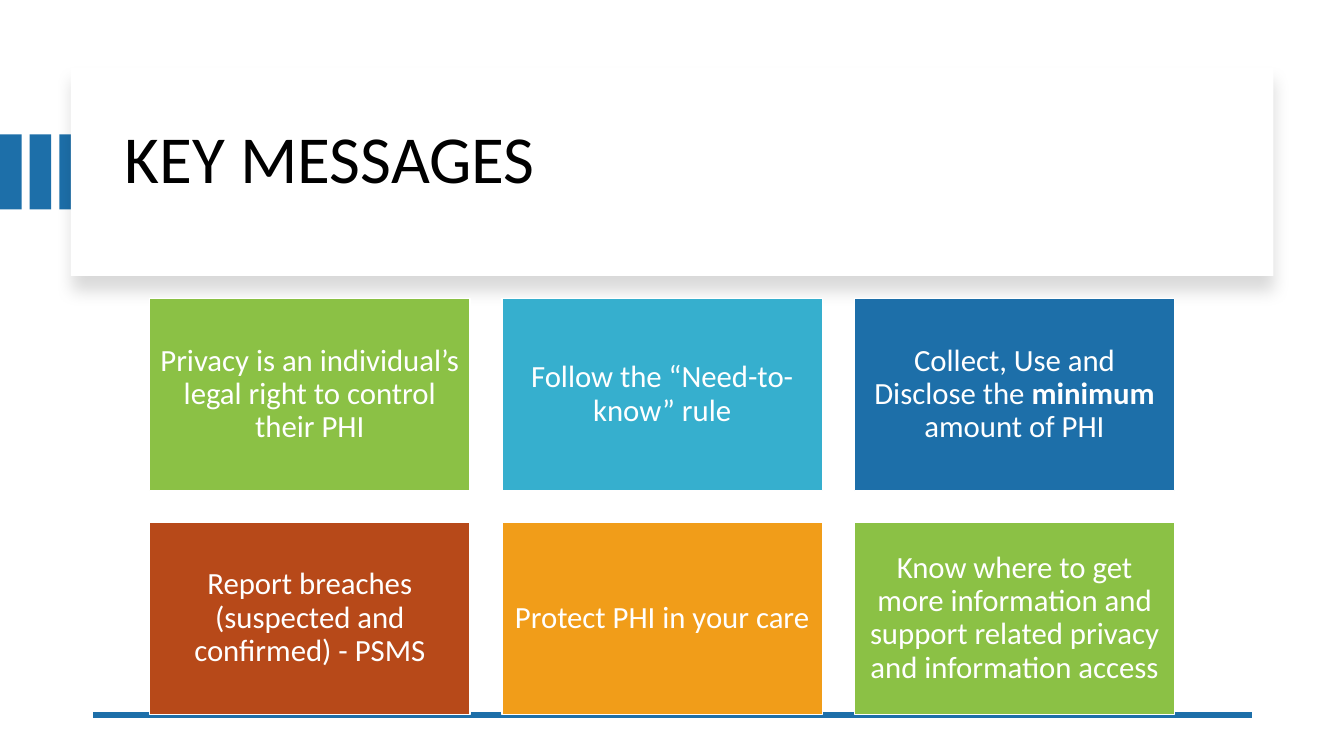
from lxml.etree import SubElement
from pptx import Presentation
from pptx.dml.color import RGBColor
from pptx.enum.shapes import MSO_CONNECTOR, MSO_SHAPE
from pptx.enum.text import MSO_ANCHOR, PP_ALIGN
from pptx.oxml import parse_xml
from pptx.oxml.ns import qn
from pptx.util import Pt

BLUE, GREEN, WHITE = "1D6FA9", "8BC145", "FFFFFF"


def rgb(value):
    return RGBColor.from_string(value)


def add_rect(s, x, y, w, h, fill):
    sp = s.shapes.add_shape(MSO_SHAPE.RECTANGLE, Pt(x), Pt(y), Pt(w), Pt(h))
    sp.shadow.inherit = False
    sp.fill.solid()
    sp.fill.fore_color.rgb = rgb(fill)
    sp.line.fill.background()
    return sp


prs = Presentation()
prs.slide_width, prs.slide_height = Pt(960), Pt(540)
s = prs.slides.add_slide(prs.slide_layouts[6])

# Blue bars at the left edge
for i in range(3):
    add_rect(s, i * 21.2, 96, 15.4, 53.5, BLUE)

# Title panel with a soft shadow below
panel = add_rect(s, 50.6, 48.2, 859, 149, WHITE)
effects = panel._element.spPr.find(qn("a:effectLst"))
effects.append(parse_xml(
    '<a:outerShdw xmlns:a="http://schemas.openxmlformats.org/drawingml/2006/main" '
    'blurRad="139700" dist="127000" dir="5400000" algn="t" rotWithShape="0">'
    '<a:srgbClr val="000000"><a:alpha val="15000"/></a:srgbClr></a:outerShdw>'))

# Title
tf = s.shapes.add_textbox(Pt(82.1), Pt(64), Pt(801.4), Pt(103.7)).text_frame
tf.word_wrap = True
tf.vertical_anchor = MSO_ANCHOR.MIDDLE
p = tf.paragraphs[0]
p.text = "KEY MESSAGES"
p.line_spacing = 0.9
p.font.name, p.font.size = "Calibri", Pt(48)
p.font.color.rgb = rgb("000000")

# Rule at the bottom
rule = s.shapes.add_connector(MSO_CONNECTOR.STRAIGHT, Pt(894.2), Pt(510.6), Pt(66.2), Pt(510.6))
rule.line.color.rgb = rgb(BLUE)
rule.line.width = Pt(4.5)
SubElement(rule._element.spPr, qn("a:effectLst"))

# Message tiles, three to a row; every second run is bold
tiles = [
    (GREEN, ["Privacy is an individual’s legal right to control their PHI"]),
    ("36AFCE", ["Follow the “Need-to-know” rule"]),
    (BLUE, ["Collect, Use and Disclose the ", "minimum ", "amount of PHI"]),
    ("B74919", ["Report breaches (suspected and confirmed) - PSMS"]),
    ("F19D19", ["Protect PHI in your care"]),
    (GREEN, ["Know where to get more information and support related privacy "
             "and information access"]),
]
for i, (fill, runs) in enumerate(tiles):
    row, col = divmod(i, 3)
    sp = add_rect(s, 106.9 + col * 251.7, 213.1 + row * 159.9, 228.8, 137.3, fill)
    sp.line.color.rgb = rgb(WHITE)
    sp.line.width = Pt(1)
    tf = sp.text_frame
    tf.word_wrap = True
    tf.vertical_anchor = MSO_ANCHOR.MIDDLE
    tf.margin_left = tf.margin_right = tf.margin_top = tf.margin_bottom = Pt(6.6)
    p = tf.paragraphs[0]
    p.alignment = PP_ALIGN.CENTER
    p.line_spacing = 0.9
    p.font.name, p.font.size = "Calibri", Pt(22)
    p.font.color.rgb = rgb(WHITE)
    for j, text in enumerate(runs):
        r = p.add_run()
        r.text = text
        if j % 2:
            r.font.bold = True

prs.save("out.pptx")
